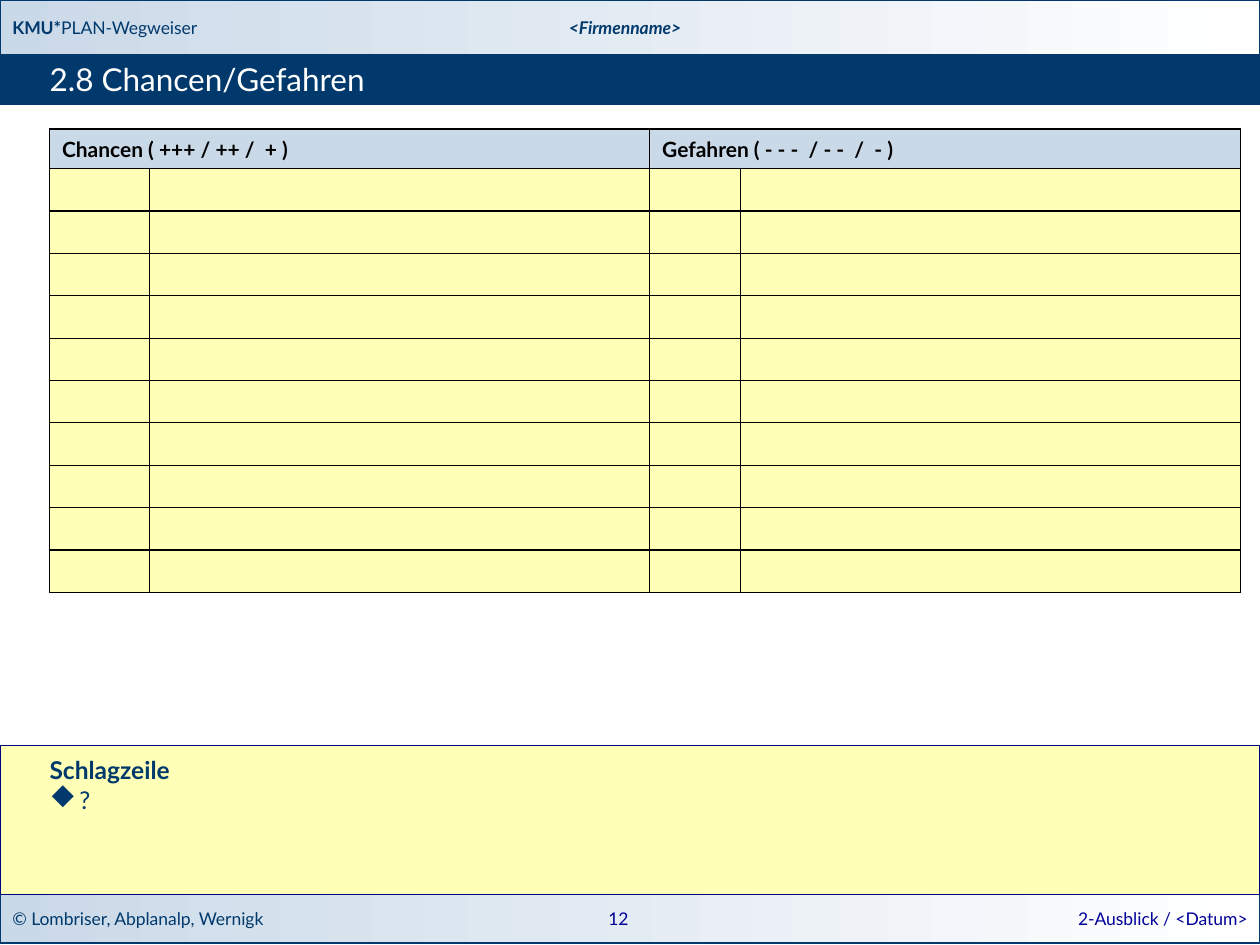
from lxml.etree import SubElement
from pptx import Presentation
from pptx.dml.color import RGBColor
from pptx.enum.shapes import MSO_SHAPE as Shape
from pptx.enum.text import MSO_ANCHOR as Anchor, PP_ALIGN as Align
from pptx.oxml.ns import qn
from pptx.util import Cm, Pt

NAVY = RGBColor(0x01, 0x39, 0x6C)
BLUE = RGBColor(0x00, 0x00, 0x99)
EDGE = RGBColor(0x00, 0x00, 0x80)
PALE = RGBColor(0xCA, 0xD9, 0xE8)
CREAM = RGBColor(0xFF, 0xFF, 0xB7)
WHITE = RGBColor(0xFF, 0xFF, 0xFF)
BLACK = RGBColor(0x00, 0x00, 0x00)

FONT = "Lato"
WIDE, HIGH = 25.4, 19.05
MARGIN = 1

BRAND = [("KMU*", True), ("PLAN-Wegweiser", False)]
FIRM = "<Firmenname>"
TITLE = "2.8 Chancen/Gefahren"
HEADS = ["Chancen ( +++ / ++ /  + )", "Gefahren ( - - -  / - -  /  - )"]
LINES = 10
COLS = [2.02, 10.08, 1.82, 10.08]
GRID_H, HEAD_H = 9.35, 0.8
NEWS, POINT = "Schlagzeile", "?"
OWNERS = "© Lombriser, Abplanalp, Wernigk"
PAGE = "12"
PART = "2-Ausblick / <Datum>"

# top and height of each full-width band
TOP = (0, 1.1)
BAR = (1.1, 1)
NOTE = (15.03, 3)
FOOT = (18.03, 0.98)


def write(para, text, size=10, color=NAVY, bold=False, italic=False, align=Align.LEFT):
    para.alignment = align
    run = para.add_run()
    run.text = text
    font = run.font
    font.name, font.size, font.bold, font.italic = FONT, Pt(size), bold, italic
    font.color.rgb = color


def inset(box, left=0.25, top=0.13, right=0.25, low=0.13):
    box.margin_left, box.margin_top = Cm(left), Cm(top)
    box.margin_right, box.margin_bottom = Cm(right), Cm(low)


def band(slide, place, fill=None, line=NAVY):
    """Full-width rectangle; without a fill it fades from pale blue to white."""
    top, height = place
    shape = slide.shapes.add_shape(Shape.RECTANGLE, 0, Cm(top), Cm(WIDE), Cm(height))
    shape.shadow.inherit = False
    if fill is None:
        shape.fill.gradient()
        shape.fill.gradient_angle = 0
        for stop, color in zip(shape.fill.gradient_stops, (PALE, WHITE)):
            stop.color.rgb = color
    else:
        shape.fill.solid()
        shape.fill.fore_color.rgb = fill
    shape.line.color.rgb = line
    shape.line.width = Pt(0.75)
    frame = shape.text_frame
    frame.word_wrap = True
    frame.vertical_anchor = Anchor.MIDDLE
    return frame


def label(slide, left, width, place, text, **style):
    top, height = place
    frame = slide.shapes.add_textbox(Cm(left), Cm(top), Cm(width), Cm(height)).text_frame
    frame.word_wrap = True
    frame.vertical_anchor = Anchor.MIDDLE
    write(frame.paragraphs[0], text, **style)
    return frame


def diamond(para, indent):
    """Bullet the paragraph; the letter u is a diamond in Wingdings."""
    props = para._p.get_or_add_pPr()
    props.set("marL", str(Cm(indent)))
    props.set("indent", str(-Cm(indent)))
    SubElement(props, qn("a:buSzPct"), val="110000")
    SubElement(props, qn("a:buFont"), typeface="Wingdings", pitchFamily="2", charset="2")
    SubElement(props, qn("a:buChar"), char="u")


def paint(cell, color):
    """Border the cell in black and fill it."""
    props = cell._tc.get_or_add_tcPr()
    for side in "LRTB":
        line = SubElement(props, qn(f"a:ln{side}"), w=str(Pt(0.75)))
        fill = SubElement(line, qn("a:solidFill"))
        SubElement(fill, qn("a:srgbClr"), val=str(BLACK))
    cell.fill.solid()
    cell.fill.fore_color.rgb = color


def grid(slide):
    table = slide.shapes.add_table(LINES + 1, len(COLS), Cm(MARGIN), Cm(2.6),
                                   Cm(sum(COLS)), Cm(GRID_H)).table
    table.first_row = table.horz_banding = False
    for col, width in zip(table.columns, COLS):
        col.width = Cm(width)
    for i, row in enumerate(table.rows):
        row.height = Cm((GRID_H - HEAD_H) / LINES if i else HEAD_H)
        for cell in row.cells:
            inset(cell, top=0, low=0)
            paint(cell, CREAM if i else PALE)
    for i, head in enumerate(HEADS):
        cell = table.cell(0, 2 * i)
        cell.merge(table.cell(0, 2 * i + 1))
        cell.vertical_anchor = Anchor.MIDDLE
        write(cell.text_frame.paragraphs[0], head, size=12, color=BLACK, bold=True)


def main():
    deck = Presentation()
    deck.slide_width, deck.slide_height = Cm(WIDE), Cm(HIGH)
    slide = deck.slides.add_slide(deck.slide_layouts[6])

    write(band(slide, FOOT).paragraphs[0], OWNERS)
    brand = band(slide, TOP).paragraphs[0]
    for text, bold in BRAND:
        write(brand, text, bold=bold)
    band(slide, BAR, fill=NAVY)

    label(slide, 8.1, 9, TOP, FIRM, bold=True, italic=True, align=Align.CENTER)
    label(slide, 17.35, 8.05, FOOT, PART, color=BLUE, align=Align.RIGHT)
    label(slide, 11.86, 1.22, FOOT, PAGE, color=BLUE, align=Align.CENTER)
    title = label(slide, MARGIN, 23.6, BAR, TITLE, size=18, color=WHITE)
    inset(title, 0, 0, 0, 0)

    grid(slide)

    note = band(slide, NOTE, fill=CREAM, line=EDGE)
    note.vertical_anchor = Anchor.TOP
    inset(note, left=MARGIN, top=0.2, right=0.5, low=0.2)
    write(note.paragraphs[0], NEWS, size=14, bold=True)
    point = note.add_paragraph()
    diamond(point, 0.6)
    write(point, POINT, size=14)

    deck.save("out.pptx")


if __name__ == "__main__":
    main()
